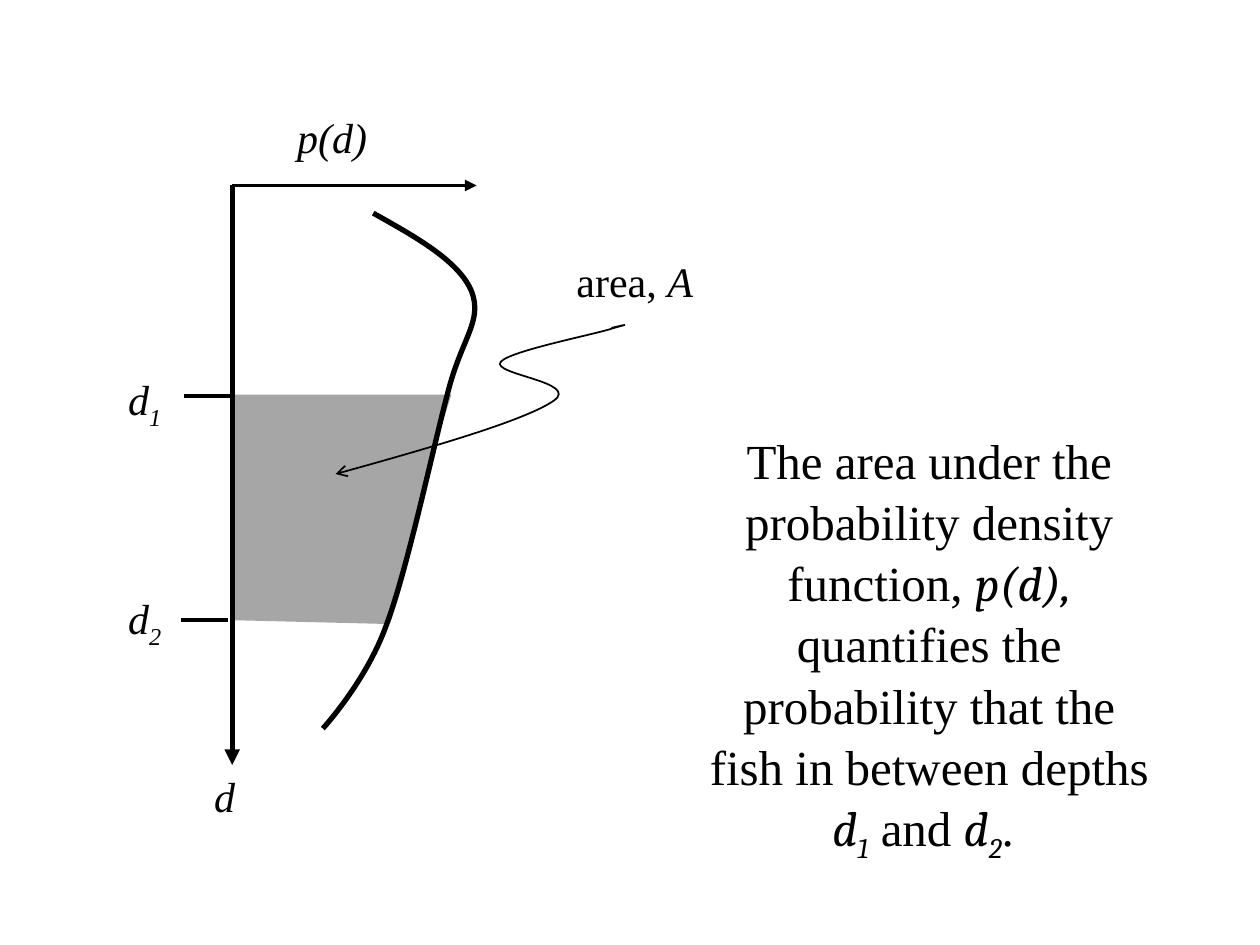
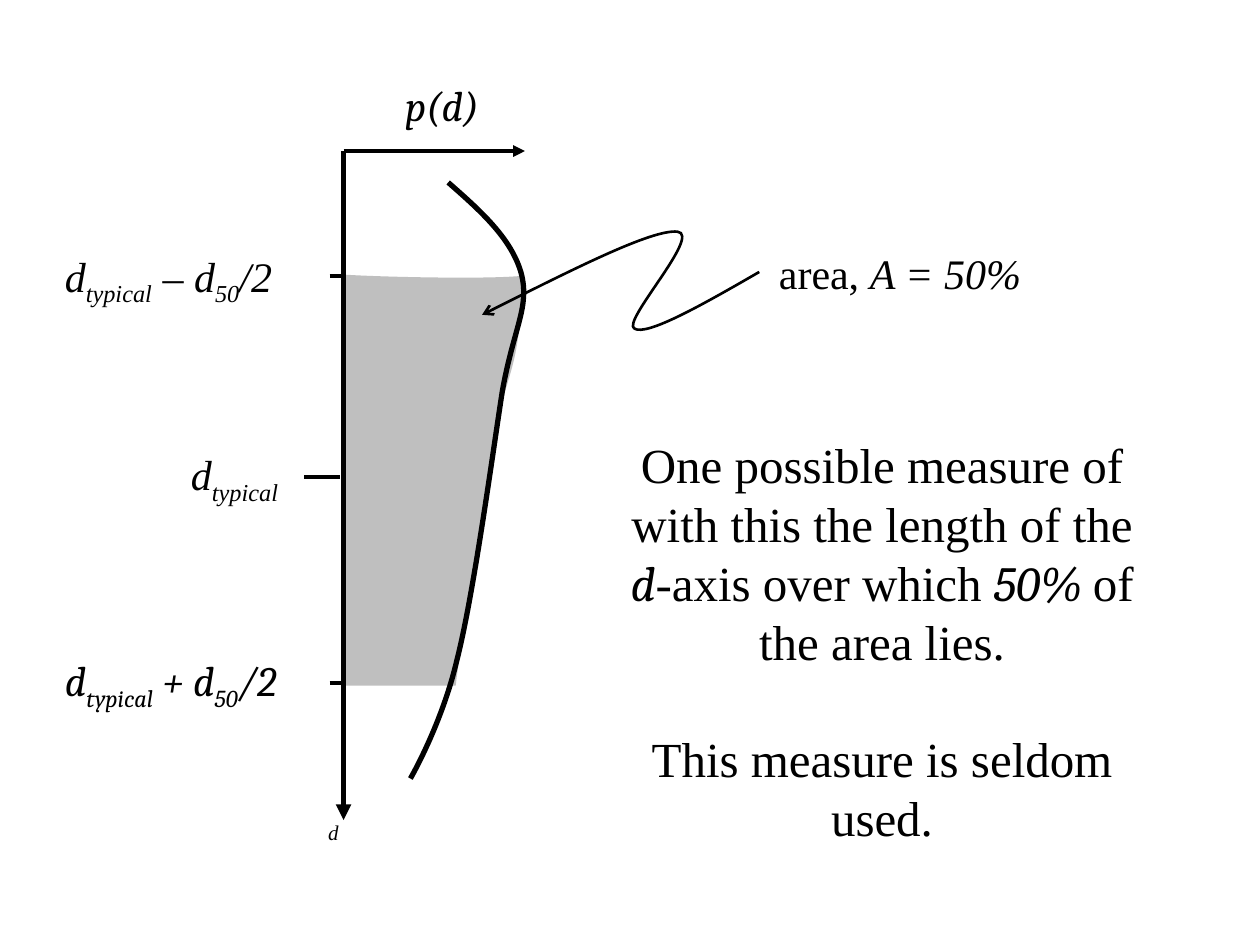
from lxml.etree import SubElement
from pptx import Presentation
from pptx.dml.color import RGBColor
from pptx.enum.shapes import MSO_CONNECTOR
from pptx.enum.text import MSO_ANCHOR, PP_ALIGN
from pptx.oxml.ns import qn
from pptx.util import Pt

INK = "000000"
SERIF = "Times New Roman"
ITALIC, SUB = "italic", "subscript"
LINE_PITCH = Pt(33.6)


def color(hex_text):
    return RGBColor.from_string(hex_text)


# ---- Text ----
def add_text(page, box, paras, size=24, italic_font=SERIF, align=PP_ALIGN.LEFT,
             anchor=MSO_ANCHOR.TOP, wrap=False, spacing=None, gap=None):
    """Each paragraph is a list of plain strings or (text, style) pairs."""
    frame = page.shapes.add_textbox(*map(Pt, box)).text_frame
    frame.word_wrap = wrap
    frame.vertical_anchor = anchor
    for index, spans in enumerate(paras):
        para = frame.add_paragraph() if index else frame.paragraphs[0]
        para.alignment = align
        para.line_spacing = spacing
        if index:
            para.space_before = gap
        for item in spans:
            words, style = (item, None) if isinstance(item, str) else item
            span = para.add_run()
            span.text = words
            span.font.size = Pt(size)
            span.font.italic = style is not None
            span.font.name = italic_font if style else SERIF
            span.font.color.rgb = color(INK)
            if style == SUB:
                span.font._element.set("baseline", "-25000")


def add_explanation(page, box, paras, spacing=LINE_PITCH):
    add_text(page, box, paras, size=28, italic_font="Cambria", wrap=True,
             align=PP_ALIGN.CENTER, anchor=MSO_ANCHOR.MIDDLE,
             spacing=spacing, gap=LINE_PITCH)


# ---- Lines and outlines ----
def set_line(shape, width, end=None, arrow="triangle"):
    shape.line.color.rgb = color(INK)
    shape.line.width = Pt(width)
    if end:
        SubElement(shape.line._get_or_add_ln(), qn("a:" + end), type=arrow)


def add_line(page, start, stop, width=2.25, end=None):
    line = page.shapes.add_connector(MSO_CONNECTOR.STRAIGHT, *map(Pt, start + stop))
    set_line(line, width, end)
    SubElement(line._element.spPr, qn("a:effectLst"))


def bend(shape, segments):
    """Turn each run of three straight steps that stands for a cubic into one curve."""
    steps = iter(list(shape._element.iter(qn("a:lnTo"))))
    for segment in segments:
        first = next(steps)
        if len(segment) == 6:
            first.tag = qn("a:cubicBezTo")
            for _ in range(2):
                control = next(steps)
                first.append(control[0])
                control.getparent().remove(control)


def add_outline(page, origin, path, fill=None, width=None, end=None):
    """A path is a start point, then straight (2 numbers) or cubic (6) segments."""
    left, top = origin
    points = [(Pt(left + part[i]), Pt(top + part[i + 1]))
              for part in path for i in range(0, len(part), 2)]
    builder = page.shapes.build_freeform(*points[0])
    builder.add_line_segments(points[1:], close=fill is not None)
    shape = builder.convert_to_shape()
    bend(shape, path[1:])
    shape.shadow.inherit = False
    if fill:
        shape.fill.solid()
        shape.fill.fore_color.rgb = color(fill)
        shape.line.fill.background()
    else:
        shape.fill.background()
        set_line(shape, width, end, arrow="arrow")


# ---- Depth graph: everything is placed relative to the axis origin ----
def add_depth_graph(page, origin, axis_width, axis_depth, area, area_fill,
                    density, pointer, pointer_width, ticks, labels):
    left, top = origin
    add_outline(page, origin, area, fill=area_fill)
    add_line(page, origin, (left + axis_width, top), end="tailEnd")
    add_line(page, origin, (left, top + axis_depth), width=3, end="tailEnd")
    add_outline(page, origin, density, width=3)
    for start, stop, depth in ticks:
        add_line(page, (left + start, top + depth), (left + stop, top + depth))
    add_outline(page, origin, pointer, width=pointer_width, end="headEnd")
    for (x, y, width), spans, style in labels:
        add_text(page, (left + x, top + y, width, 36), [spans], **style)


def build_area_slide(page):
    add_depth_graph(
        page, (132.7, 106), 139.7, 331.2,
        area=[(0, 119.5), (125.3, 119.5), (116.6, 146.9),
              (115.9, 153.4, 114.5, 157.7, 112.3, 165.6),
              (110.9, 173.5, 110.2, 179.3, 105.8, 193),
              (102.2, 210.2, 95.8, 235.4, 90, 250.6), (0, 248.4)],
        area_fill="A6A6A6",
        density=[(80.6, 15.8),
                 (105.1, 29.5, 129.6, 43.2, 136.8, 60.5),
                 (143.3, 77.8, 131, 87.1, 123.1, 118.8),
                 (114.5, 151.2, 100.1, 219.6, 87.8, 252),
                 (76.3, 283.7, 51.8, 310.3, 51.8, 310.3)],
        pointer=[(59, 164.9),
                 (113.8, 149.8, 167.8, 133.9, 183.6, 123.1),
                 (199.4, 112.3, 147.6, 108, 153.4, 100.8),
                 (159.1, 94.3, 208.1, 85, 218.2, 81.4),
                 (229, 78.5, 223.2, 79.9, 216.7, 81.4)],
        pointer_width=1,
        ticks=[(-27.4, 0, 120.2), (-29.5, -2.2, 248.2)],
        labels=[((-17.5, 331, 70), [("d", ITALIC)], {}),
                ((-66.6, 104.2, 70), [("d", ITALIC), ("1", SUB)], {}),
                ((-66.6, 229.2, 70), [("d", ITALIC), ("2", SUB)], {}),
                ((30, -45.8, 70), [("p(d)", ITALIC)], {}),
                ((189.6, 36.5, 109), ["area, ", ("A", ITALIC)], {})])
    # Proportional spacing keeps the last line, with its subscripts, evenly spaced
    add_explanation(page, (396, 246.2, 270, 246.2), [[
        "The area under the probability density function, ", ("p(d), ", ITALIC),
        "quantifies the probability that the fish in between depths ",
        ("d", ITALIC), ("1", SUB), " and ", ("d", ITALIC), ("2", SUB), ". "]],
        spacing=1.04)


def build_width_slide(page):
    cambria = {"italic_font": "Cambria"}

    def depth_limit(sign):
        return [("d", ITALIC), ("typical", SUB), (f" {sign} d", ITALIC),
                ("50", SUB), ("/2", ITALIC)]

    add_depth_graph(
        page, (196.3, 86.3), 103.7, 382.3,
        area=[(0, 70.6),
              (20.2, 72, 83.5, 73.4, 102.2, 71.3),
              (100.8, 125.3, 93.6, 124.6, 88.6, 154.1),
              (84.2, 183.6, 77, 229.7, 73.4, 248.4),
              (68.4, 273.6, 66.2, 288, 64.1, 305.5), (-0.7, 305.5),
              (0, 263.5, -1.4, 110.9, 0, 70.6)],
        area_fill="BFBFBF",
        density=[(59.8, 18),
                 (77.8, 33.8, 95.8, 49.7, 101.5, 69.8),
                 (106.6, 89.3, 97.2, 100.8, 90.7, 137.5),
                 (85, 174.2, 74.2, 254.2, 64.8, 290.9),
                 (56.2, 327.6, 38.2, 358.6, 38.2, 358.6)],
        pointer=[(79.2, 93.6),
                 (128.2, 69.1, 176.4, 44.6, 190.8, 46.1),
                 (205.2, 47.5, 158.4, 97.9, 166.3, 101.5),
                 (173.5, 105.8, 205.2, 87.8, 237.6, 69.1)],
        pointer_width=1.5,
        ticks=[(-7.9, 0, 71.6), (-22.3, -2.2, 186.5), (-7.9, 0, 303.8)],
        labels=[((-15.8, 378.7, 52), [("d", ITALIC)], {"size": 12}),
                ((-94.3, 166.6, 84), [("d", ITALIC), ("typical", SUB)], {}),
                ((28.1, -44.6, 81), [("p(d)", ITALIC)], cambria),
                ((-166.3, 53.3, 166), depth_limit("–"), {}),
                ((-166.3, 284.2, 181), depth_limit("+"), cambria),
                ((241.7, 51.9, 167), ["area, ", ("A = 50%", ITALIC)], {})])
    add_explanation(page, (348, 216, 312, 300.2), [
        ["One possible measure of with this the length of the ", ("d", ITALIC),
         "-axis over which ", ("50% ", ITALIC), "of the area lies."],
        ["This measure is seldom used."]])


def main():
    deck = Presentation()
    deck.slide_width, deck.slide_height = Pt(720), Pt(540)
    for build in (build_area_slide, build_width_slide):
        build(deck.slides.add_slide(deck.slide_layouts[6]))
    deck.save("out.pptx")


if __name__ == "__main__":
    main()
